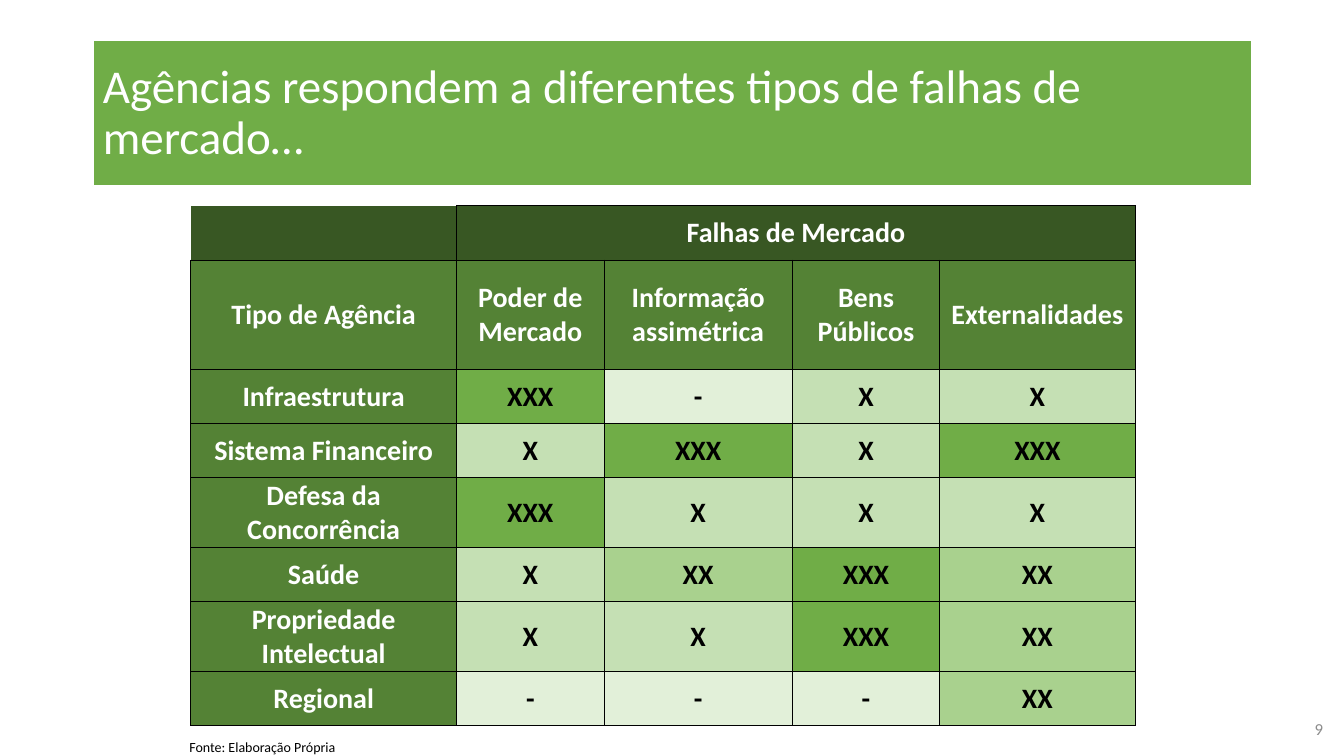
from dataclasses import dataclass

from lxml.etree import SubElement
from pptx import Presentation
from pptx.dml.color import RGBColor
from pptx.enum.text import MSO_ANCHOR as Anchor, MSO_AUTO_SIZE as AutoSize, PP_ALIGN as Align
from pptx.oxml import parse_xml
from pptx.oxml.ns import nsdecls, qn
from pptx.util import Inches, Pt


@dataclass(frozen=True)
class Theme:
    font: str = "Calibri"
    white: str = "FFFFFF"
    black: str = "000000"
    gray: str = "8C8C8C"
    banner: str = "70AD47"
    top_header: str = "385723"
    header: str = "548235"
    title_size: float = 33.6
    table_size: float = 20
    number_size: float = 12
    source_size: float = 10


THEME = Theme()

# Cell shade by intensity of the market failure
SHADES = {"-": "E2F0D9", "X": "C5E0B4", "XX": "A9D18E", "XXX": "70AD47"}

COLUMN_WIDTHS = [2.64, 1.46, 1.87, 1.46, 1.94]
ROW_HEIGHTS = [0.54, 1.08, 0.54, 0.54, 0.61, 0.54, 0.61, 0.54]
ROWS = [
    ["", "Falhas de Mercado", "", "", ""],
    ["Tipo de Agência", "Poder de Mercado", "Informação assimétrica",
     "Bens Públicos", "Externalidades"],
    ["Infraestrutura", "XXX", "-", "X", "X"],
    ["Sistema Financeiro", "X", "XXX", "X", "XXX"],
    ["Defesa da Concorrência", "XXX", "X", "X", "X"],
    ["Saúde", "X", "XX", "XXX", "XX"],
    ["Propriedade Intelectual", "X", "X", "XXX", "XX"],
    ["Regional", "-", "-", "-", "XX"],
]


def format_paragraph(paragraph, size, color, align=Align.LEFT, bold=False):
    paragraph.alignment = align
    font = paragraph.font
    font.name, font.size, font.bold = THEME.font, Pt(size), bold
    font.color.rgb = RGBColor.from_string(color)


def set_borders(cell, hidden=()):
    """Draw thin black edges, leaving out the hidden ones."""
    properties = cell._tc.get_or_add_tcPr()
    for position, side in enumerate("LRTB"):
        line = parse_xml(f'<a:ln{side} {nsdecls("a")} w="6350"/>')
        if side in hidden:
            SubElement(line, qn("a:noFill"))
        else:
            fill = SubElement(line, qn("a:solidFill"))
            SubElement(fill, qn("a:srgbClr"), val=THEME.black)
        properties.insert(position, line)


def add_title(slide, left, top, width, height):
    title = slide.shapes.title
    title.left, title.top = Inches(left), Inches(top)
    title.width, title.height = Inches(width), Inches(height)
    title.fill.solid()
    title.fill.fore_color.rgb = RGBColor.from_string(THEME.banner)
    title.line.color.rgb = RGBColor.from_string(THEME.white)
    title.line.width = Pt(1.5)
    frame = title.text_frame
    frame.text = "Agências respondem a diferentes tipos de falhas de mercado…"
    frame.auto_size = AutoSize.NONE
    frame.word_wrap = True
    frame.vertical_anchor = Anchor.MIDDLE
    paragraph = frame.paragraphs[0]
    paragraph.line_spacing = 0.9
    format_paragraph(paragraph, THEME.title_size, THEME.white)


def fill_cell(cell, text, fill, color):
    cell.fill.solid()
    cell.fill.fore_color.rgb = RGBColor.from_string(fill)
    cell.margin_left = cell.margin_right = cell.margin_top = Inches(0.01)
    cell.margin_bottom = 0
    cell.vertical_anchor = Anchor.MIDDLE
    cell.text = text
    format_paragraph(cell.text_frame.paragraphs[0], THEME.table_size, color,
                     Align.CENTER, bold=True)


def add_failure_table(slide, left, top):
    frame = slide.shapes.add_table(
        len(ROWS), len(COLUMN_WIDTHS), Inches(left), Inches(top),
        Inches(sum(COLUMN_WIDTHS)), Inches(sum(ROW_HEIGHTS)))
    table = frame.table
    table.first_row = table.horz_banding = False
    for column, width in zip(table.columns, COLUMN_WIDTHS):
        column.width = Inches(width)
    for row, height in zip(table.rows, ROW_HEIGHTS):
        row.height = Inches(height)

    for i, texts in enumerate(ROWS):
        for j, text in enumerate(texts):
            cell = table.cell(i, j)
            if i == 0:
                fill, color = THEME.top_header, THEME.white
            elif text in SHADES:
                fill, color = SHADES[text], THEME.black
            else:
                fill, color = THEME.header, THEME.white
            fill_cell(cell, text, fill, color)
            set_borders(cell, hidden="LT" if i == j == 0 else "")
    table.cell(0, 1).merge(table.cell(0, len(COLUMN_WIDTHS) - 1))


def add_label(slide, box, text, size, color, align=Align.LEFT, anchor=Anchor.TOP):
    label = slide.shapes.add_textbox(*map(Inches, box))
    frame = label.text_frame
    frame.word_wrap = True
    frame.vertical_anchor = anchor
    frame.text = text
    format_paragraph(frame.paragraphs[0], size, color, align)


def main():
    presentation = Presentation()
    presentation.slide_width = Inches(13.33)
    presentation.slide_height = Inches(7.5)
    slide = presentation.slides.add_slide(presentation.slide_layouts[5])

    # Title banner
    add_title(slide, 0.92, 0.4, 11.5, 1.45)
    # Agencies against market failures
    add_failure_table(slide, 1.89, 2.04)
    # Slide number and source
    add_label(slide, (12.57, 7.03, 0.65, 0.4), "9", THEME.number_size,
              THEME.gray, Align.RIGHT, Anchor.MIDDLE)
    add_label(slide, (1.78, 7.28, 3.98, 0.27), "Fonte: Elaboração Própria",
              THEME.source_size, THEME.black)

    presentation.save("out.pptx")


if __name__ == "__main__":
    main()
